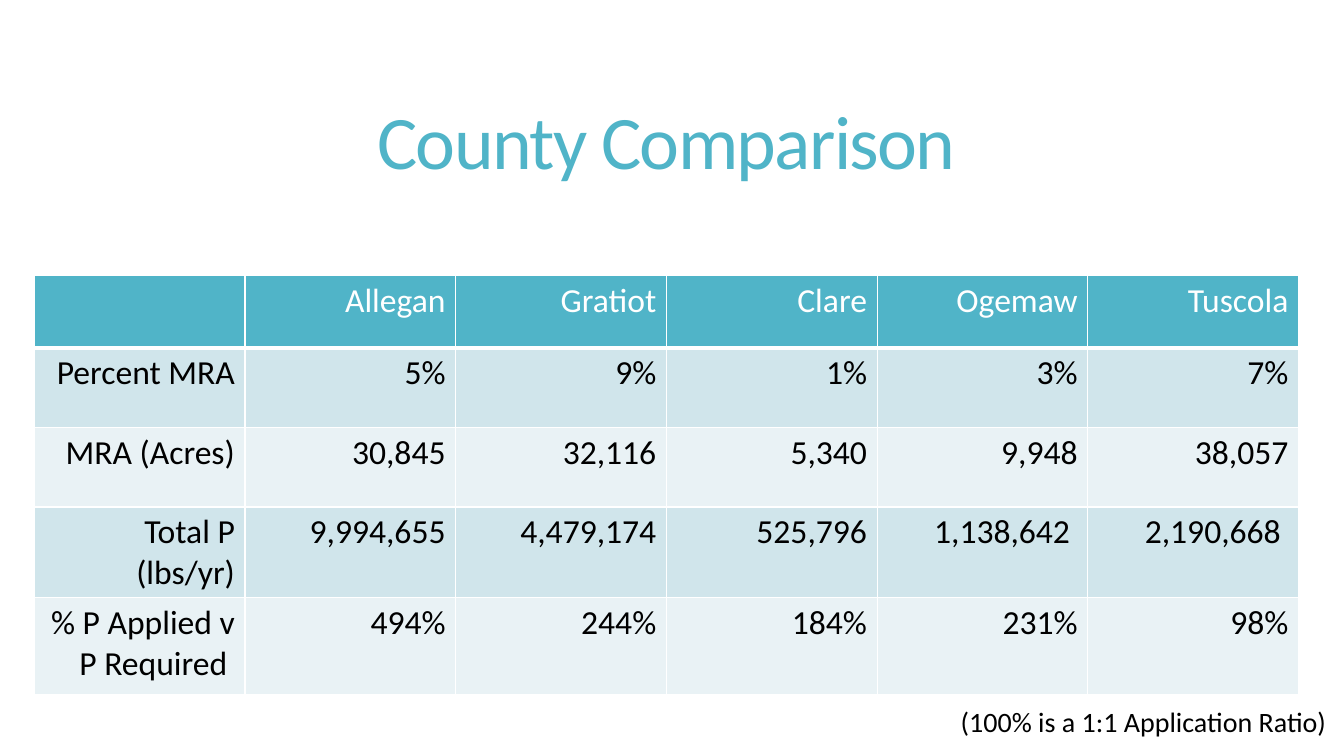
"""Build the County Comparison slide with its table and footnote."""
import pptx
import pptx.dml.color
import pptx.enum.text
import pptx.oxml
import pptx.oxml.ns
import pptx.util
from pptx.util import Inches

COLORS = {
    "accent": "50B4C8",
    "band_dark": "D0E5EB",
    "band_light": "E9F2F5",
    "white": "FFFFFF",
    "black": "000000",
}
ROWS = [
    ["", "Allegan", "Gratiot", "Clare", "Ogemaw", "Tuscola"],
    ["Percent MRA", "5%", "9%", "1%", "3%", "7%"],
    ["MRA (Acres)", "30,845", "32,116", "5,340", "9,948", "38,057"],
    ["Total P (lbs/yr)", "9,994,655", "4,479,174", "525,796", "1,138,642 ", "2,190,668 "],
    ["% P Applied v P Required ", "494%", "244%", "184%", "231%", "98%"],
]
ROW_HEIGHTS = [0.72, 0.79, 0.79, 0.79, 0.96]
COLUMN_WIDTH = 2.09
ALIGN = pptx.enum.text.PP_ALIGN


def style_text(paragraph, text, size, color, alignment):
    paragraph.text = text
    paragraph.alignment = alignment
    paragraph.font.name = "Calibri"
    paragraph.font.size = pptx.util.Pt(size)
    paragraph.font.bold = False
    paragraph.font.color.rgb = pptx.dml.color.RGBColor.from_string(COLORS[color])


def add_border(cell, side, points):
    border = pptx.oxml.parse_xml(
        f'<a:{side} {pptx.oxml.ns.nsdecls("a")} w="{pptx.util.Pt(points)}"><a:solidFill>'
        f'<a:srgbClr val="{COLORS["white"]}"/></a:solidFill></a:{side}>'
    )
    properties = cell._tc.get_or_add_tcPr()
    properties.insert(["lnL", "lnR", "lnT", "lnB"].index(side), border)


presentation = pptx.Presentation()
presentation.slide_width = Inches(13.33)
presentation.slide_height = Inches(7.5)
slide = presentation.slides.add_slide(presentation.slide_layouts[6])

title = slide.shapes.add_textbox(Inches(0.72), Inches(0.55), Inches(11.78), Inches(1.81))
title.text_frame.word_wrap = True
title.text_frame.vertical_anchor = pptx.enum.text.MSO_ANCHOR.MIDDLE
heading = title.text_frame.paragraphs[0]
style_text(heading, "County Comparison", 54, "accent", ALIGN.CENTER)
heading.line_spacing = 0.85
heading.runs[0]._r.get_or_add_rPr().set("spc", "-120")

table = slide.shapes.add_table(
    len(ROWS), len(ROWS[0]), Inches(0.34), Inches(2.73),
    Inches(COLUMN_WIDTH * len(ROWS[0])), Inches(sum(ROW_HEIGHTS)),
).table
table.first_row = True
table.horz_banding = False
for column in table.columns:
    column.width = Inches(COLUMN_WIDTH)

for row_index, labels in enumerate(ROWS):
    table.rows[row_index].height = Inches(ROW_HEIGHTS[row_index])
    is_header = row_index == 0
    band = "band_dark" if row_index % 2 else "band_light"
    for column_index, label in enumerate(labels):
        cell = table.cell(row_index, column_index)
        cell.fill.solid()
        cell.fill.fore_color.rgb = pptx.dml.color.RGBColor.from_string(
            COLORS["accent" if is_header else band])
        style_text(cell.text_frame.paragraphs[0], label, 24,
                   "white" if is_header else "black", ALIGN.RIGHT)
        for side in ["lnL", "lnR", "lnT", "lnB"]:
            add_border(cell, side, 3 if is_header and side == "lnB" else 1)

footnote = slide.shapes.add_textbox(Inches(9.43), Inches(6.94), Inches(4.84), Inches(0.44))
footnote.text_frame.word_wrap = True
style_text(footnote.text_frame.paragraphs[0], "(100% is a 1:1 Application Ratio)",
           20, "black", ALIGN.LEFT)

presentation.save("out.pptx")
